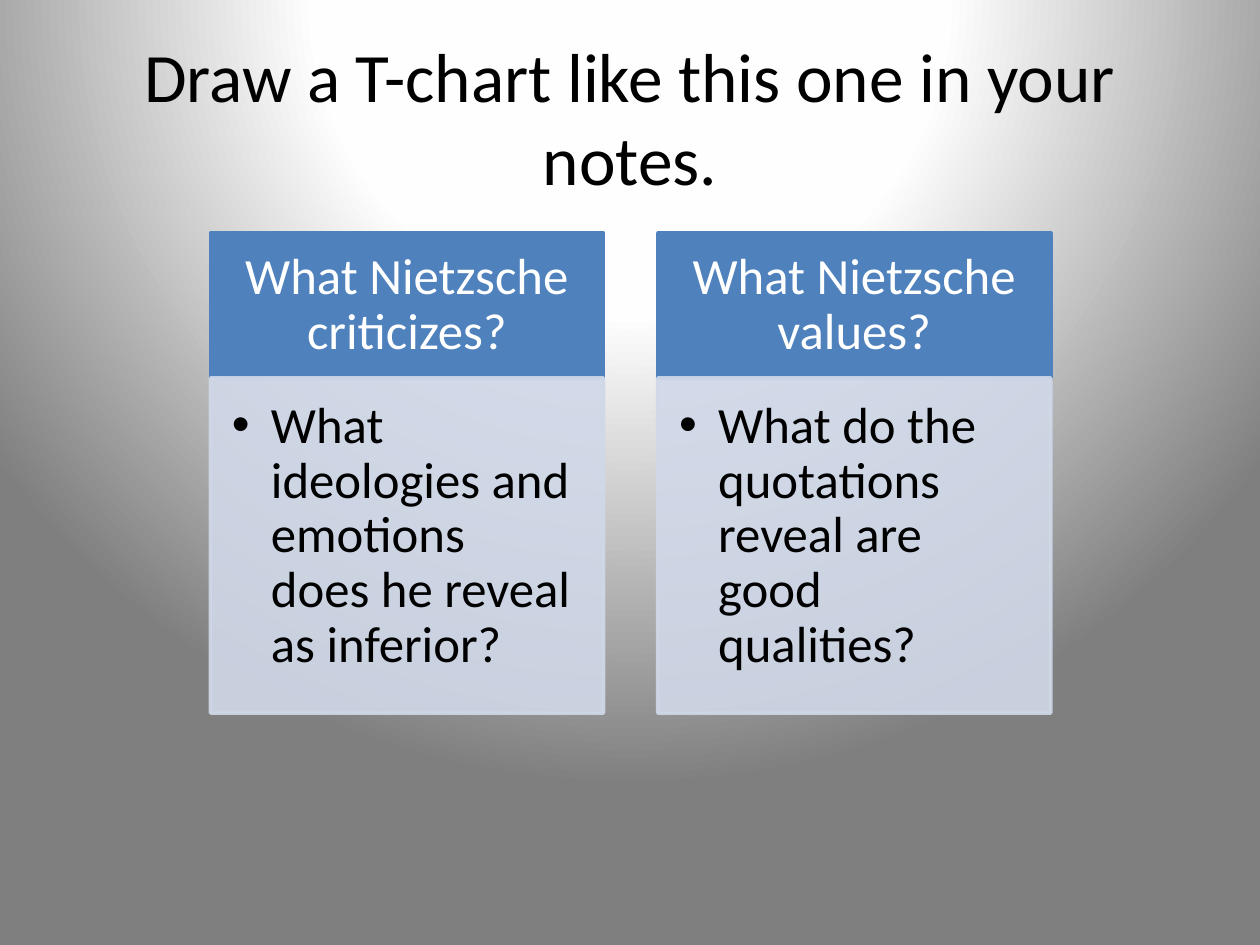
from dataclasses import dataclass

from lxml.etree import SubElement
from pptx import Presentation
from pptx.dml.color import RGBColor
from pptx.enum.shapes import MSO_SHAPE
from pptx.enum.text import MSO_ANCHOR, PP_ALIGN
from pptx.oxml import parse_xml
from pptx.oxml.ns import nsdecls, qn
from pptx.slide import Slide
from pptx.text.text import TextFrame
from pptx.util import Inches, Pt


@dataclass(frozen=True)
class Theme:
    font: str = "Calibri"
    title_size: float = 39.6
    column_size: float = 29
    ink: str = "000000"
    header_ink: str = "FFFFFF"
    header_fill: str = "4F81BD"
    body_fill: str = "D0D8E8"
    body_opacity: int = 90
    backdrop: tuple = ((0, "FFFFFF"), (40, "FEFEFE"), (100, "7F7F7F"))


@dataclass(frozen=True)
class Column:
    header: str
    question: str


@dataclass(frozen=True)
class Panel:
    """Look of one cell of the T-chart; insets run left, top, right, bottom."""
    top: float
    height: float
    fill: str
    opacity: int
    ink: str
    insets: tuple
    anchor: MSO_ANCHOR
    align: PP_ALIGN
    bulleted: bool


THEME = Theme()
COLUMN_LEFT, COLUMN_WIDTH, COLUMN_PITCH = 1.67, 3.12, 3.55
BULLET_INDENT = Inches(0.31)

HEADER = Panel(1.85, 1.15, THEME.header_fill, 100, THEME.header_ink,
               (0.23, 0.13, 0.23, 0.13), MSO_ANCHOR.MIDDLE, PP_ALIGN.CENTER, False)
BODY = Panel(HEADER.top + HEADER.height, 2.66, THEME.body_fill, THEME.body_opacity,
             THEME.ink, (0.17, 0.17, 0.23, 0.25), MSO_ANCHOR.TOP, PP_ALIGN.LEFT, True)

COLUMNS = (
    Column("What Nietzsche criticizes?",
           "What ideologies and emotions does he reveal as inferior?"),
    Column("What Nietzsche values?",
           "What do the quotations reveal are good qualities?"),
)


def paint_backdrop(slide: Slide) -> None:
    """Fill the slide with a circular gradient centred above its top edge."""
    slide.background.fill.gradient()
    default_gradient = next(slide.element.iter(qn("a:gradFill")))
    stops = "".join(
        f'<a:gs pos="{position * 1000}"><a:srgbClr val="{color}"/></a:gs>'
        for position, color in THEME.backdrop
    )
    circular = parse_xml(
        f'<a:gradFill {nsdecls("a")} rotWithShape="1"><a:gsLst>{stops}</a:gsLst>'
        '<a:path path="circle">'
        '<a:fillToRect l="50000" t="-80000" r="50000" b="180000"/>'
        "</a:path></a:gradFill>"
    )
    default_gradient.getparent().replace(default_gradient, circular)


def write_text(frame: TextFrame, text: str, size: float, ink: str,
               align: PP_ALIGN, anchor: MSO_ANCHOR):
    frame.word_wrap = True
    frame.vertical_anchor = anchor
    paragraph = frame.paragraphs[0]
    paragraph.alignment = align
    run = paragraph.add_run()
    run.text = text
    for attribute, value in {"name": THEME.font, "size": Pt(size)}.items():
        setattr(run.font, attribute, value)
    run.font.color.rgb = RGBColor.from_string(ink)
    return paragraph


def add_bullet(paragraph) -> None:
    properties = paragraph._p.get_or_add_pPr()
    properties.set("marL", str(BULLET_INDENT))
    properties.set("indent", str(-BULLET_INDENT))
    SubElement(properties, qn("a:buFont")).set("typeface", "Arial")
    SubElement(properties, qn("a:buChar")).set("char", "•")


def draw_panel(slide: Slide, panel: Panel, left: float, text: str) -> None:
    box = slide.shapes.add_shape(
        MSO_SHAPE.RECTANGLE, Inches(left), Inches(panel.top),
        Inches(COLUMN_WIDTH), Inches(panel.height))
    box.shadow.inherit = False
    box.line.width = Pt(2)
    for fill in (box.fill, box.line.fill):
        fill.solid()
        fill.fore_color.rgb = RGBColor.from_string(panel.fill)
    if panel.opacity < 100:
        for color in box._element.spPr.iter(qn("a:srgbClr")):
            SubElement(color, qn("a:alpha")).set("val", str(panel.opacity * 1000))

    frame = box.text_frame
    for side, inset in zip(("left", "top", "right", "bottom"), panel.insets):
        setattr(frame, f"margin_{side}", Inches(inset))
    paragraph = write_text(frame, text, THEME.column_size, panel.ink,
                           panel.align, panel.anchor)
    paragraph.line_spacing = 0.9
    if panel.bulleted:
        add_bullet(paragraph)


def main() -> None:
    deck = Presentation()
    deck.slide_width, deck.slide_height = Inches(10), Inches(7.5)
    slide = deck.slides.add_slide(deck.slide_layouts[6])
    paint_backdrop(slide)

    title = slide.shapes.add_textbox(Inches(0.5), Inches(0.3), Inches(9), Inches(1.25))
    write_text(title.text_frame, "Draw a T-chart like this one in your notes.",
               THEME.title_size, THEME.ink, PP_ALIGN.CENTER, MSO_ANCHOR.MIDDLE)

    for index, column in enumerate(COLUMNS):
        left = COLUMN_LEFT + index * COLUMN_PITCH
        draw_panel(slide, HEADER, left, column.header)
        draw_panel(slide, BODY, left, column.question)

    deck.save("out.pptx")


if __name__ == "__main__":
    main()
